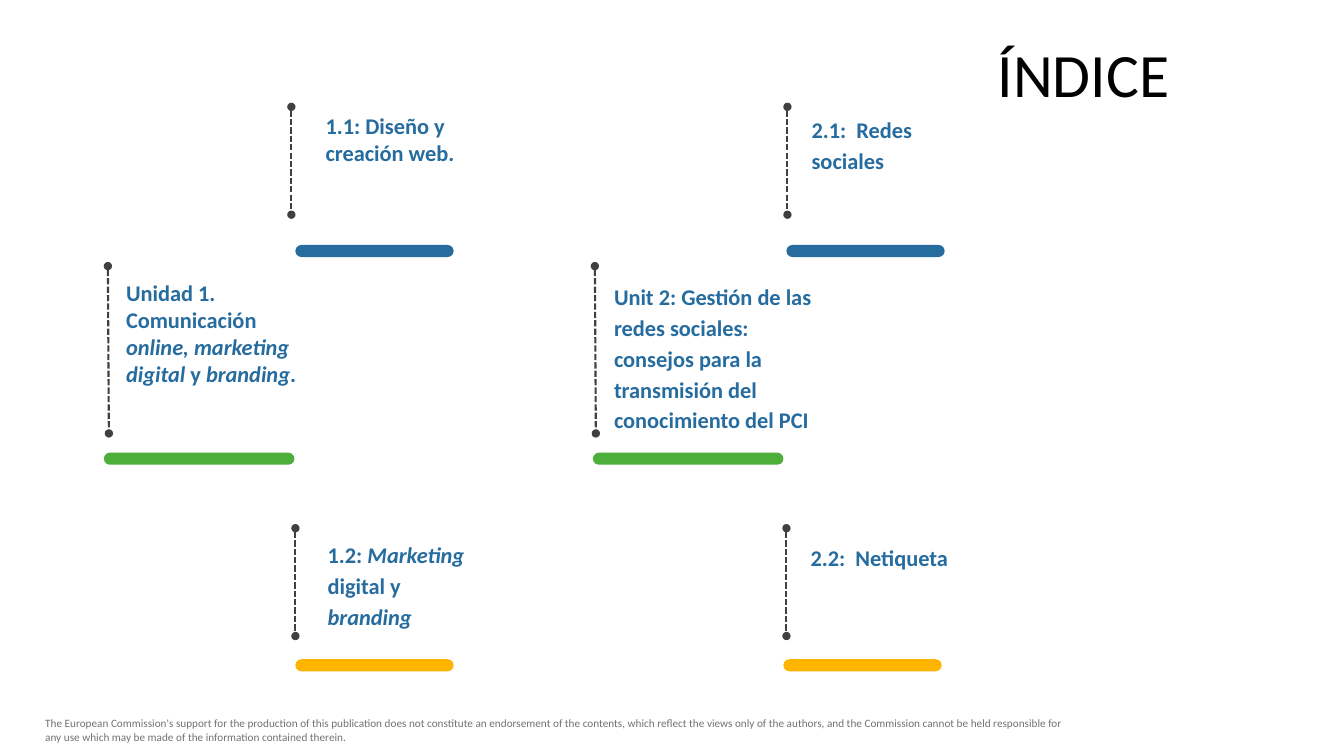
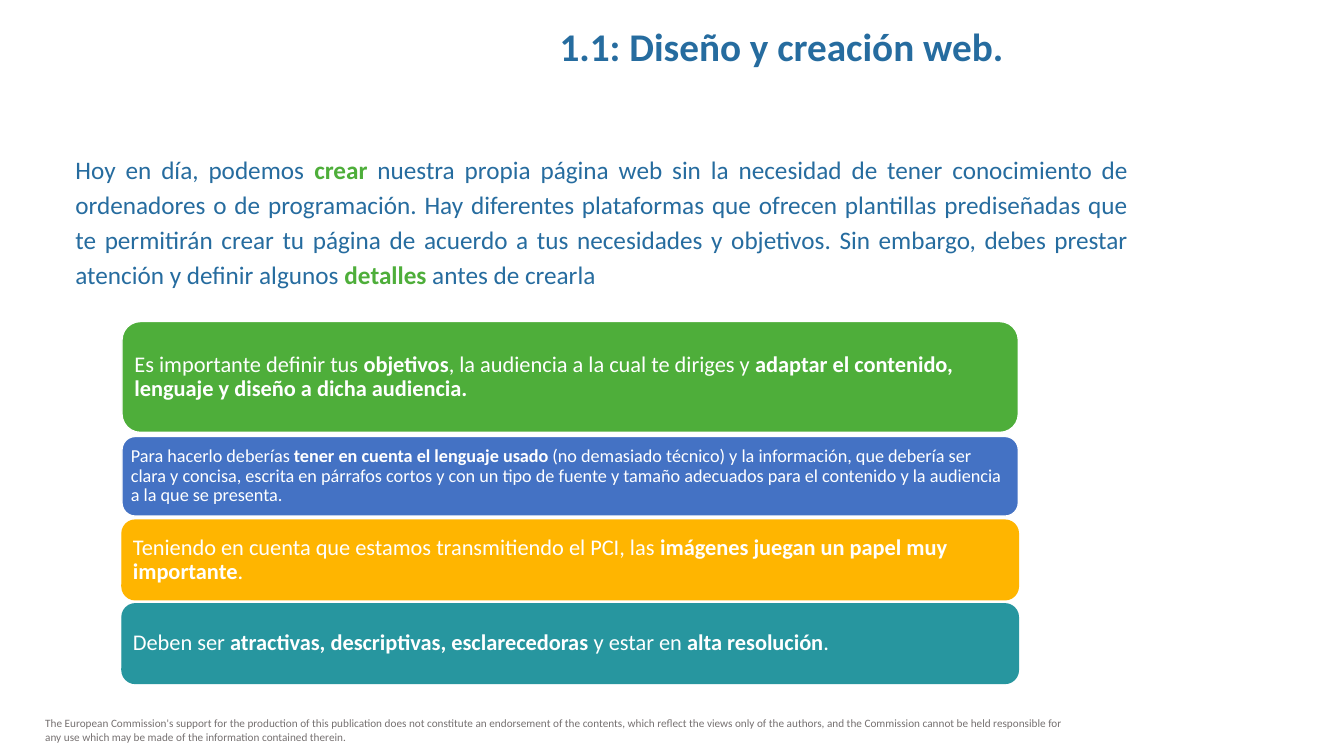
from pptx import Presentation
from pptx import util as u
from pptx.dml.color import RGBColor
from pptx.enum import dml, shapes, text
from pptx.oxml.ns import qn
from lxml import etree

COLORS = dict(blue="266C9F", green="4EAE3A", amber="FFB500", royal="4472C4", teal="27969F",
              white="FFFFFF", black="000000", dash="404040", note="767171")
FONT = "Calibri"
WIDTH, HEIGHT = 13.33, 7.5

DISCLAIMER = (
    "The European Commission's support for the production of this publication does not "
    "constitute an endorsement of the contents, which reflect the views only of the authors, "
    "and the Commission cannot be held responsible for any use which may be made of the "
    "information contained therein.")

# Index: runs are (text, marks) with b = bold, i = italic, g = green
TIERS = {
    "upper": dict(top=1.06, length=1.07, lean=0, bar_top=2.43, bar_width=1.57, color="blue"),
    "unit": dict(top=2.64, length=1.66, lean=0.01, bar_top=4.49, bar_width=1.89, color="green"),
    "lower": dict(top=5.24, length=1.07, lean=0, bar_top=6.54, bar_width=1.57, color="amber"),
}
BAR_HEIGHT = 0.12
# tier, rule x, bar x, text box, line spacing, runs
ENTRIES = [
    ("unit", 1.07, 1.03, (1.13, 2.72, 2.12, 1.18), 1.0,
     [("Unidad 1. Comunicación ", "b"), ("online, marketing digital ", "bi"), ("y", "b"),
      (" branding", "bi"), (".", "b")]),
    ("upper", 2.89, 2.93, (3.11, 1.06, 1.73, 0.64), 1.0, [("1.1: Diseño y creación web.", "b")]),
    ("lower", 2.93, 2.93, (3.13, 5.28, 1.73, 1.01), 1.15,
     [("1.2: ", "b"), ("Marketing", "bi"), (" digital y ", "b"), ("branding", "bi")]),
    ("unit", 5.9, 5.88, (5.97, 2.72, 2.4, 1.94), 1.15,
     [("Unit 2: Gestión de las redes sociales: consejos para la transmisión del "
       "conocimiento del PCI", "b")]),
    ("upper", 7.81, 7.8, (7.93, 1.06, 1.73, 0.7), 1.15, [("2.1:  Redes sociales", "b")]),
    ("lower", 7.8, 7.77, (7.92, 5.31, 1.73, 0.39), 1.15, [("2.2:  Netiqueta", "b")]),
]

# Web design
INTRO = [
    ("Hoy en día, podemos ", ""), ("crear", "bg"),
    (" nuestra propia página web sin la necesidad de tener conocimiento de ordenadores o de "
     "programación. Hay diferentes plataformas que ofrecen plantillas prediseñadas que te "
     "permitirán crear tu página de acuerdo a tus necesidades y objetivos. Sin embargo, debes "
     "prestar atención y definir algunos ", ""),
    ("detalles", "bg"), (" antes de crearla", ""),
]
# height, fill, outline, text size, inset, runs
ADVICE = [
    (1.1, "green", "white", 16, 0.07,
     [("Es importante definir tus ", ""), ("objetivos", "b"),
      (", la audiencia a la cual te diriges y ", ""),
      ("adaptar el contenido, lenguaje y diseño a dicha audiencia.", "b")]),
    (0.79, "royal", "white", 13, 0.05,
     [("Para hacerlo deberías ", ""), ("tener en cuenta el lenguaje usado ", "b"),
      ("(no demasiado técnico) y la información, que debería ser clara y concisa, escrita en "
       "párrafos cortos y con un tipo de fuente y tamaño adecuados para el contenido y la "
       "audiencia a la que se presenta.", "")]),
    (0.79, "amber", "amber", 16, 0.07,
     [("Teniendo en cuenta que estamos transmitiendo el PCI, las ", ""),
      ("imágenes juegan un papel muy importante", "b"), (".", "")]),
    (0.79, "teal", "teal", 16, 0.07,
     [("Deben ser ", ""), ("atractivas, descriptivas, esclarecedoras ", "b"),
      ("y estar en ", ""), ("alta resolución", "b"), (".", "")]),
]
ADVICE_LEFT, ADVICE_TOP, ADVICE_WIDTH, ADVICE_GAP = 1.21, 3.19, 8.89, 0.04


def rgb(name):
    return RGBColor.from_string(COLORS[name])


def assign(target, **values):
    for name, value in values.items():
        setattr(target, name, value)


def place(shape, left, top, width, height):
    assign(shape, left=u.Inches(left), top=u.Inches(top),
           width=u.Inches(width), height=u.Inches(height))


def write(shape, runs, size, color, align="LEFT", spacing=1.0, anchor="TOP", inset=(0.1, 0.05)):
    side, edge = map(u.Inches, inset)
    frame = shape.text_frame
    assign(frame, word_wrap=True, vertical_anchor=getattr(text.MSO_ANCHOR, anchor),
           margin_left=side, margin_right=side, margin_top=edge, margin_bottom=edge)
    paragraph = frame.paragraphs[0]
    assign(paragraph, alignment=getattr(text.PP_ALIGN, align), line_spacing=spacing)
    for words, marks in runs:
        run = paragraph.add_run()
        run.text = words
        assign(run.font, name=FONT, size=u.Pt(size), bold="b" in marks, italic="i" in marks)
        run.font.color.rgb = rgb("green" if "g" in marks else color)


def add_text(slide, box, runs, size, color, **style):
    textbox = slide.shapes.add_textbox(*map(u.Inches, box))
    write(textbox, runs, size, color, **style)
    return textbox


def add_rounded(slide, box, fill, outline=None):
    shape = slide.shapes.add_shape(shapes.MSO_SHAPE.ROUNDED_RECTANGLE, *map(u.Inches, box))
    shape.shadow.inherit = False
    shape.fill.solid()
    shape.fill.fore_color.rgb = rgb(fill)
    if outline:
        shape.line.color.rgb = rgb(outline)
        shape.line.width = u.Pt(1)
    else:
        shape.line.fill.background()
    return shape


def add_dotted_rule(slide, x, top, length, lean):
    rule = slide.shapes.add_connector(
        shapes.MSO_CONNECTOR.STRAIGHT, *map(u.Inches, (x, top, x + lean, top + length)))
    rule.line.color.rgb = rgb("dash")
    assign(rule.line, width=u.Pt(1.5), dash_style=dml.MSO_LINE.SQUARE_DOT)
    properties = rule.element.spPr
    for end in ("a:headEnd", "a:tailEnd"):
        etree.SubElement(properties.find(qn("a:ln")), qn(end), type="oval")
    etree.SubElement(properties, qn("a:effectLst"))


def add_slide(deck, layout, title, box, size, color, **style):
    slide = deck.slides.add_slide(layout)
    place(slide.shapes.title, *box)
    write(slide.shapes.title, title, size, color, anchor="MIDDLE", **style)
    return slide


def build_index(deck, layout):
    slide = add_slide(deck, layout, [("ÍNDICE", "")], (3.09, 0.37, 8.61, 0.79), 44, "black",
                      align="RIGHT", spacing=0.9)
    for tier_name, rule_x, bar_x, box, spacing, runs in ENTRIES:
        tier = TIERS[tier_name]
        bar = add_rounded(slide, (bar_x, tier["bar_top"], tier["bar_width"], BAR_HEIGHT),
                          tier["color"])
        bar.adjustments[0] = 0.5
        add_dotted_rule(slide, rule_x, tier["top"], tier["length"], tier["lean"])
        add_text(slide, box, runs, 16, "blue", spacing=spacing, inset=(0.12, 0.05))
    return slide


def build_web_design(deck, layout):
    slide = add_slide(deck, layout, [("1.1: Diseño y creación web.", "b")],
                      (2.43, 0.06, 10.64, 0.79), 28, "blue", align="CENTER")
    add_text(slide, (0.65, 1.44, 10.64, 1.47), INTRO, 18, "blue", align="JUSTIFY", spacing=1.15)
    top = ADVICE_TOP
    for height, fill, outline, size, inset, runs in ADVICE:
        panel = add_rounded(slide, (ADVICE_LEFT, top, ADVICE_WIDTH, height), fill, outline)
        write(panel, runs, size, "white", spacing=0.9, anchor="MIDDLE", inset=(inset, inset))
        top += height + ADVICE_GAP
    return slide


def main():
    deck = Presentation()
    assign(deck, slide_width=u.Inches(WIDTH), slide_height=u.Inches(HEIGHT))
    layout = deck.slide_layouts.get_by_name("Title Only")
    index = build_index(deck, layout)
    build_web_design(deck, layout)
    # The disclaimer lives on the layout, so both slides show it
    footer = add_text(index, (0.35, 7.06, 10.46, 0.37), [(DISCLAIMER, "")], 8, "note")
    layout.shapes.element.append(footer.element)
    deck.save("out.pptx")


if __name__ == "__main__":
    main()
